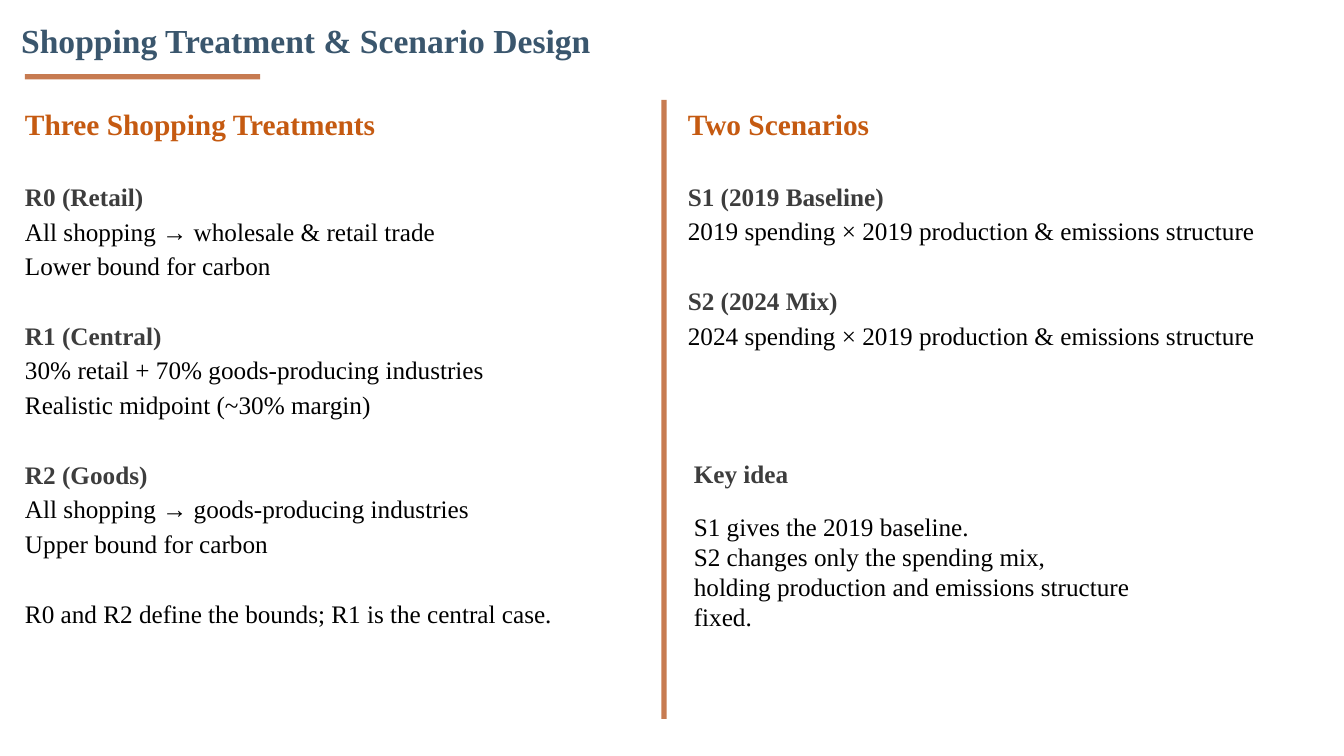
from pptx import Presentation, util as u
from pptx.dml.color import RGBColor
from pptx.enum import shapes, text

WIDE, HIGH = 17.78, 10
INK = {"title": "3A566D", "head": "C55A11", "label": "3D3D3D",
       "body": "000000", "rule": "C77B51"}
# Size and weight for each kind of line
KINDS = {"title": {"size": u.Pt(32), "bold": True},
         "head": {"size": u.Pt(28), "bold": True},
         "label": {"size": u.Pt(24), "bold": True},
         "body": {"size": u.Pt(24), "bold": False}}
GAP = 33  # points, one line of body text


class Deck:
    """Holds the style and the slide; places are on a 100 by 100 grid."""

    def __init__(self):
        self.prs = Presentation()
        self.prs.slide_width = u.Inches(WIDE)
        self.prs.slide_height = u.Inches(HIGH)
        self.slide = self.prs.slides.add_slide(self.prs.slide_layouts[6])

    def place(self, col, row, cols, rows):
        return [u.Inches(n * side / 100) for n, side in
                ((col, WIDE), (row, HIGH), (cols, WIDE), (rows, HIGH))]

    def rule(self, *area):
        bar = self.slide.shapes.add_shape(
            shapes.MSO_SHAPE.RECTANGLE, *self.place(*area))
        bar.shadow.inherit = False
        bar.fill.solid()
        bar.fill.fore_color.rgb = RGBColor.from_string(INK["rule"])
        bar.line.fill.background()

    def text(self, area, lines, pitch=None, inset=0, **frame):
        """Each line is (kind, words) or (kind, words, points before)."""
        box = self.slide.shapes.add_textbox(*self.place(*area)).text_frame
        form = {"word_wrap": True, "auto_size": text.MSO_AUTO_SIZE.NONE,
                "margin_left": u.Inches(inset), "margin_right": u.Inches(inset),
                "margin_top": u.Inches(inset / 2),
                "margin_bottom": u.Inches(inset / 2), **frame}
        for key, val in form.items():
            setattr(box, key, val)
        for i, (kind, words, *gap) in enumerate(lines):
            par = box.add_paragraph() if i else box.paragraphs[0]
            if pitch:
                par.line_spacing = pitch
            if gap:
                par.space_before = u.Pt(gap[0])
            run = par.add_run()
            run.text = words
            for key, val in {"name": "Times New Roman", **KINDS[kind]}.items():
                setattr(run.font, key, val)
            run.font.color.rgb = RGBColor.from_string(INK[kind])

    def column(self, area, head, groups, *close):
        """A heading, then groups of a label and its body lines."""
        lines = [("head", head)]
        for label, *body in groups:
            lines.append(("label", label, GAP))
            lines += [("body", words) for words in body]
        lines += [("body", words, GAP) for words in close]
        self.text(area, lines, pitch=1.15)


def main():
    deck = Deck()

    # Title
    deck.text((1.57, 0.3, 97.64, 9), [("title", "Shopping Treatment & Scenario Design")],
              pitch=1.2, word_wrap=False, vertical_anchor=text.MSO_ANCHOR.MIDDLE)

    # Left column: treatments
    deck.column((1.86, 13.4, 46.06, 81.9), "Three Shopping Treatments", [
        ("R0 (Retail)", "All shopping → wholesale & retail trade",
         "Lower bound for carbon"),
        ("R1 (Central)", "30% retail + 70% goods-producing industries",
         "Realistic midpoint (~30% margin)"),
        ("R2 (Goods)", "All shopping → goods-producing industries",
         "Upper bound for carbon"),
    ], "R0 and R2 define the bounds; R1 is the central case.")

    # Divider
    deck.rule(49.21, 13.2, 0.39, 81.9)

    # Right column: scenarios
    deck.column((51.18, 13.4, 47.64, 56), "Two Scenarios", [
        ("S1 (2019 Baseline)",
         "2019 spending × 2019 production & emissions structure"),
        ("S2 (2024 Mix)",
         "2024 spending × 2019 production & emissions structure"),
    ])

    # Key idea
    deck.text((51.07, 60.1, 37.63, 24.2), [
        ("label", "Key idea"),
        ("body", "S1 gives the 2019 baseline.", 21.6),
        ("body", "S2 changes only the spending mix,"),
        ("body", "holding production and emissions structure fixed."),
    ], inset=0.1, auto_size=text.MSO_AUTO_SIZE.SHAPE_TO_FIT_TEXT)

    # Title underline
    deck.rule(1.86, 9.8, 17.49, 0.7)

    deck.prs.save("out.pptx")


if __name__ == "__main__":
    main()
